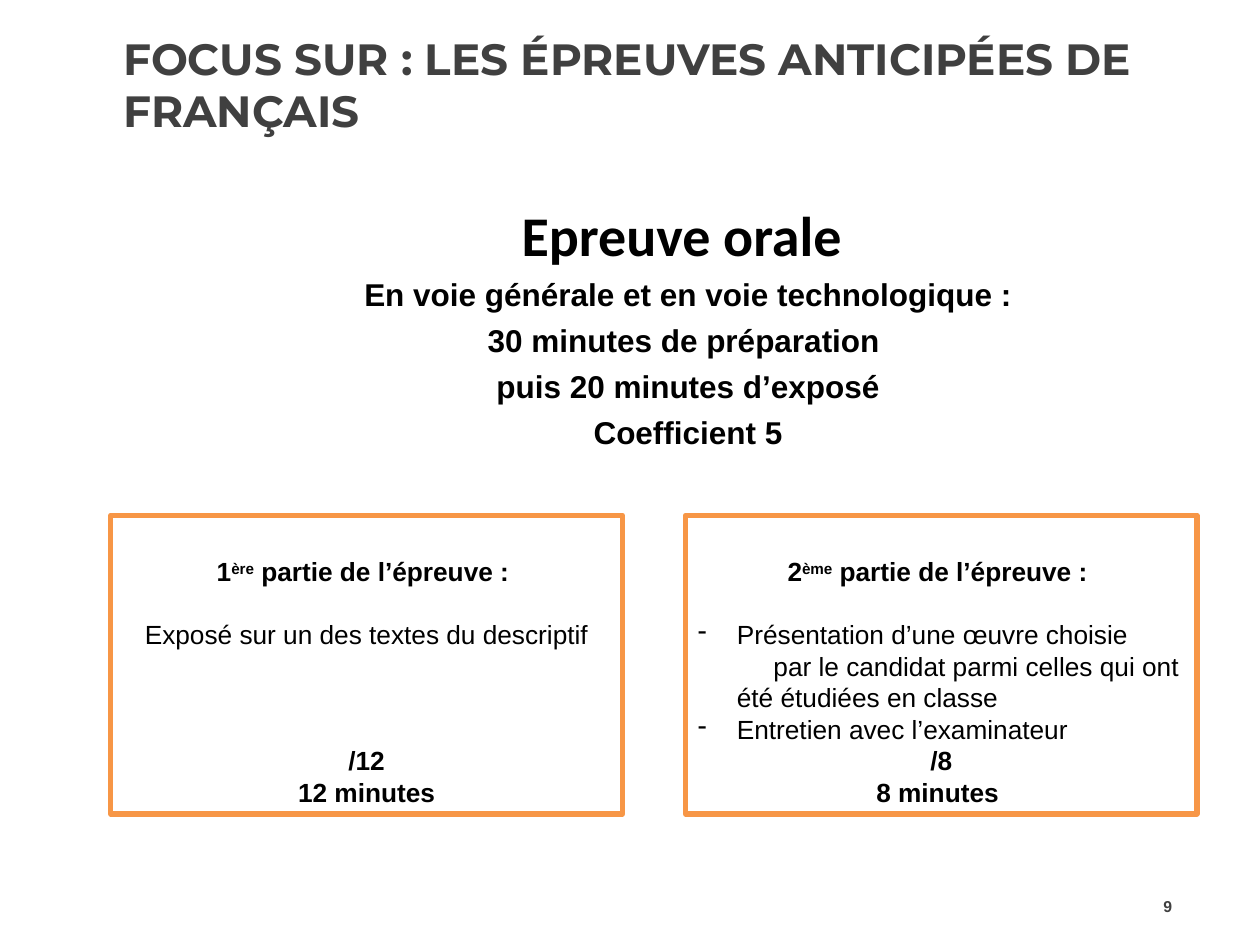
from pptx import Presentation
from pptx.dml.color import RGBColor
from pptx.enum.shapes import MSO_SHAPE as Shape
from pptx.enum.text import MSO_ANCHOR as Anchor, PP_ALIGN as Align
from pptx.oxml.ns import qn
from pptx.util import Inches, Pt
from lxml.etree import SubElement

THEME = {
    "grey": RGBColor.from_string("404040"),
    "black": RGBColor.from_string("000000"),
    "white": RGBColor.from_string("FFFFFF"),
    "edge": RGBColor.from_string("F79646"),
    "title": dict(name="Montserrat", size=Pt(25), bold=True),
    "head": dict(name="Calibri", size=Pt(32), bold=True),
    "lead": dict(name="Arial", size=Pt(18), bold=True),
    "bold": dict(name="Arial", size=Pt(15), bold=True),
    "plain": dict(name="Arial", size=Pt(15), bold=False),
    "num": dict(name="Arial", size=Pt(9), bold=True),
}

TITLE = "FOCUS SUR : LES ÉPREUVES ANTICIPÉES DE FRANÇAIS"
NUMBER = "9"
INTRO = [
    ("Epreuve orale ", "head"),
    ("En voie générale et en voie technologique :", "lead"),
    ("30 minutes de préparation ", "lead"),
    ("puis 20 minutes d’exposé", "lead"),
    ("Coefficient 5", "lead"),
]
# Each line: text, style, kind, free lines above it
PARTS = [
    ("1", "ère", [
        ("Exposé sur un des textes du descriptif", "plain", "center", 1),
        ("/12", "bold", "center", 3),
        ("12 minutes", "bold", "center", 0),
    ]),
    ("2", "ème", [
        ("Présentation d’une œuvre choisie\v\tpar le candidat parmi celles"
         " qui ont été étudiées en classe", "plain", "dash", 1),
        ("Entretien avec l’examinateur", "plain", "dash", 0),
        ("/8", "bold", "center", 0),
        ("8 minutes ", "bold", "center", 0),
    ]),
]
PART = " partie de l’épreuve : "
LEFT, TOP, WIDE, HIGH, STEP = 0.88, 4.09, 4.06, 2.37, 4.56
PITCH = 18


def style(font, key, color="black"):
    for name, value in THEME[key].items():
        setattr(font, name, value)
    font.color.rgb = THEME[color]


def next_para(frame, first):
    return frame.paragraphs[0] if first else frame.add_paragraph()


def add_dash(para):
    """Hang a dash bullet and set a tab stop for the inner line."""
    props = para._p.get_or_add_pPr()
    props.set("marL", str(Inches(0.31)))
    props.set("indent", str(-Inches(0.31)))
    SubElement(props, qn("a:buFontTx"))
    SubElement(props, qn("a:buChar"), char="-")
    tabs = SubElement(props, qn("a:tabLst"))
    SubElement(tabs, qn("a:tab"), pos=str(Inches(0.6)), algn="l")


def add_box(slide, left, top, wide, high):
    box = slide.shapes.add_textbox(*map(Inches, (left, top, wide, high)))
    box.text_frame.word_wrap = True
    return box.text_frame


def add_title(slide):
    title = slide.shapes.title
    place = dict(left=LEFT, top=0.2, width=8.62, height=1.41)
    for name, value in place.items():
        setattr(title, name, Inches(value))
    frame = title.text_frame
    frame.text = TITLE
    frame.word_wrap = True
    frame.vertical_anchor = Anchor.TOP
    para = frame.paragraphs[0]
    para.alignment = Align.LEFT
    style(para.runs[0].font, "title", "grey")


def add_intro(slide):
    frame = add_box(slide, 0.9, 1.54, 8.62, 2.3)
    frame.margin_left = Inches(0.6)
    for i, (text, key) in enumerate(INTRO):
        para = next_para(frame, i == 0)
        para.alignment = Align.CENTER
        if i:
            para.space_before = Pt(4.6)
        run = para.add_run()
        run.text = text
        style(run.font, key)


def add_part(slide, col, digit, suffix, lines):
    box = slide.shapes.add_shape(
        Shape.RECTANGLE, *map(Inches, (LEFT + col * STEP, TOP, WIDE, HIGH)))
    box.shadow.inherit = False
    box.fill.solid()
    box.fill.fore_color.rgb = THEME["white"]
    box.line.color.rgb = THEME["edge"]
    box.line.width = Pt(3)
    frame = box.text_frame
    frame.word_wrap = True
    frame.vertical_anchor = Anchor.BOTTOM

    head = frame.paragraphs[0]
    head.alignment = Align.CENTER
    head.line_spacing = Pt(PITCH)
    for text in (digit, suffix, PART):
        run = head.add_run()
        run.text = text
        style(run.font, "bold")
        if text == suffix:
            run.font._element.set("baseline", "30000")

    for text, key, kind, gap in lines:
        para = frame.add_paragraph()
        para.text = text
        para.alignment = Align.CENTER if kind == "center" else Align.LEFT
        para.line_spacing = Pt(PITCH)
        para.space_before = Pt(gap * PITCH)
        if kind == "dash":
            add_dash(para)
        style(para.font, key)
        for run in para.runs:
            style(run.font, key)


def add_number(slide):
    frame = add_box(slide, 8.91, 6.99, 0.49, 0.4)
    frame.vertical_anchor = Anchor.MIDDLE
    para = frame.paragraphs[0]
    para.alignment = Align.RIGHT
    run = para.add_run()
    run.text = NUMBER
    style(run.font, "num", "grey")


def main():
    deck = Presentation()
    deck.slide_width, deck.slide_height = Inches(10), Inches(7.5)
    slide = deck.slides.add_slide(deck.slide_layouts[5])
    add_title(slide)
    add_intro(slide)
    for col, part in enumerate(PARTS):
        add_part(slide, col, *part)
    add_number(slide)
    deck.save("out.pptx")


if __name__ == "__main__":
    main()
